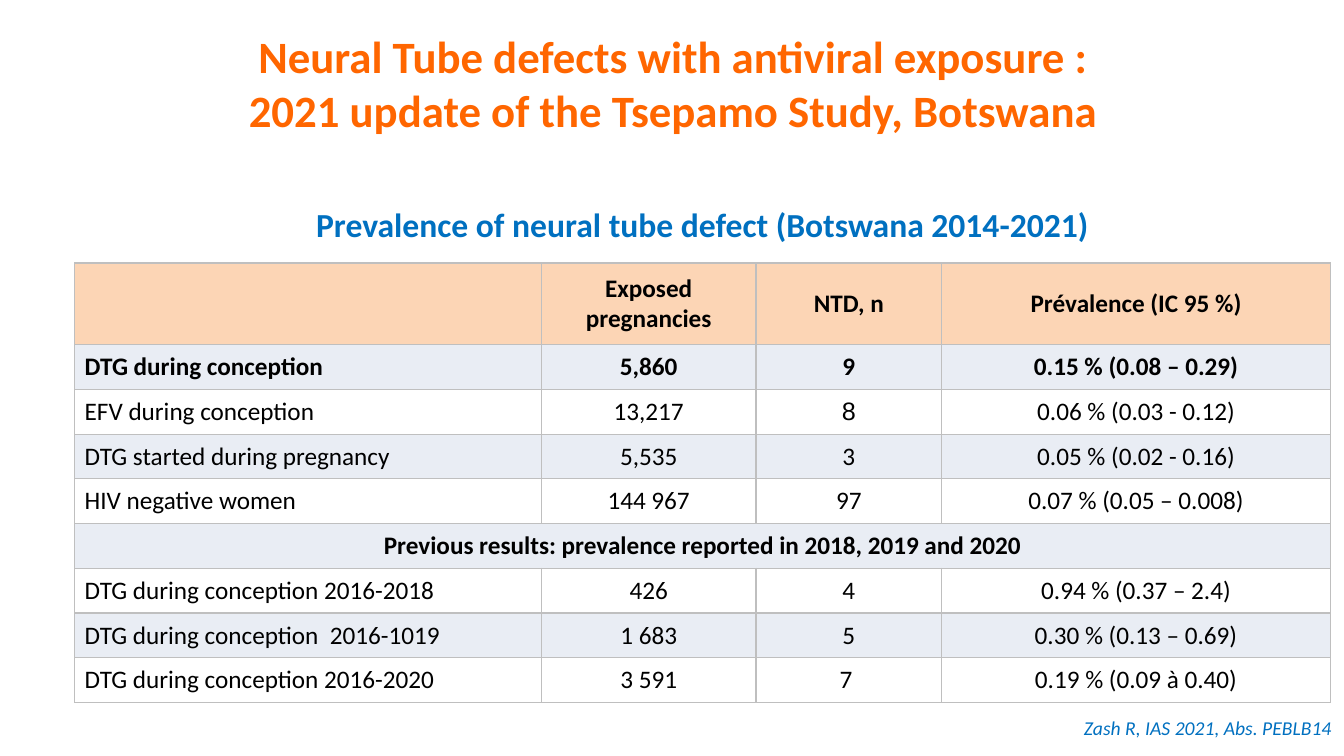
from lxml import etree
from pptx import Presentation
from pptx.dml.color import RGBColor
from pptx.enum.text import MSO_ANCHOR, MSO_AUTO_SIZE, PP_ALIGN
from pptx.oxml.ns import qn
from pptx.util import Pt

LEFT, CENTER, RIGHT = PP_ALIGN.LEFT, PP_ALIGN.CENTER, PP_ALIGN.RIGHT
MIDDLE, TOP = MSO_ANCHOR.MIDDLE, MSO_ANCHOR.TOP
NO_FIT = MSO_AUTO_SIZE.NONE
TITLE_ONLY = 5

COLORS = {
    "title": "FF6600",
    "accent": "0070C0",
    "text": "000000",
    "header": "FCD5B5",
    "band": "E9EDF4",
    "plain": "FFFFFF",
    "border": "BFBFBF",
}

COLUMN_WIDTHS = [333.4, 153.4, 132.5, 277.9]
HEADER_HEIGHT, ROW_HEIGHT = 58.3, 31.95
SECTION = "Previous results: prevalence reported in 2018, 2019 and 2020"
ROWS = [
    ["", "Exposed pregnancies", "NTD, n", "Prévalence (IC 95 %)"],
    ["DTG during conception", "5,860", "9", "0.15 % (0.08 – 0.29)"],
    ["EFV during conception", "13,217", "8", "0.06 % (0.03 - 0.12)"],
    ["DTG started during pregnancy", "5,535", "3", "0.05 % (0.02 - 0.16)"],
    ["HIV negative women", "144 967", "97", "0.07 % (0.05 – 0.008)"],
    [SECTION],
    ["DTG during conception 2016-2018", "426", "4", "0.94 % (0.37 – 2.4)"],
    ["DTG during conception  2016-1019", "1 683", "5", "0.30 % (0.13 – 0.69)"],
    ["DTG during conception 2016-2020", "3 591", "7 ", "0.19 % (0.09 à 0.40)"],
]
BOLD_ROWS = {0, 1, 5}
ARIAL_CELL = (2, 2)


class SlideBuilder:
    def __init__(self, page, font="Calibri"):
        self.page = page
        self.font = font

    def fill_text(self, frame, text, color, align=LEFT, spacing=None, **formats):
        """Fill a text frame with one formatted paragraph."""
        frame.text = text
        para = frame.paragraphs[0]
        para.alignment = align
        para.line_spacing = spacing
        for span in para.runs:
            for name, value in {"name": self.font, **formats}.items():
                setattr(span.font, name, value)
            span.font.color.rgb = RGBColor.from_string(COLORS[color])

    def place(self, box, left, top, width, height):
        for name, value in zip(("left", "top", "width", "height"),
                               (left, top, width, height)):
            setattr(box, name, Pt(value))

    def title(self, text, area, **formats):
        box = self.page.shapes.title
        self.place(box, *area)
        frame = box.text_frame
        frame.auto_size = NO_FIT
        frame.word_wrap = True
        frame.vertical_anchor = MIDDLE
        self.fill_text(frame, text, "title", CENTER, **formats)

    def text(self, text, area, color, align, wrap=True, **formats):
        box = self.page.shapes.add_textbox(*map(Pt, area))
        frame = box.text_frame
        frame.word_wrap = wrap
        frame.vertical_anchor = TOP
        self.fill_text(frame, text, color, align, **formats)

    def borders(self, cell):
        properties = cell._tc.get_or_add_tcPr()
        for side in ("lnL", "lnR", "lnT", "lnB"):
            line = etree.SubElement(properties, qn(f"a:{side}"), w=str(Pt(1)))
            fill = etree.SubElement(line, qn("a:solidFill"))
            etree.SubElement(fill, qn("a:srgbClr"), val=COLORS["border"])

    def table(self, rows, left, top):
        widths = COLUMN_WIDTHS
        heights = [HEADER_HEIGHT] + [ROW_HEIGHT] * (len(rows) - 1)
        grid = self.page.shapes.add_table(
            len(rows), len(widths), Pt(left), Pt(top),
            Pt(sum(widths)), Pt(sum(heights))).table
        for column, width in zip(grid.columns, widths):
            column.width = Pt(width)
        for r, (values, height) in enumerate(zip(rows, heights)):
            grid.rows[r].height = Pt(height)
            fill = "header" if r == 0 else "band" if r % 2 else "plain"
            for c in range(len(widths)):
                cell = grid.cell(r, c)
                self.borders(cell)
                cell.fill.solid()
                cell.fill.fore_color.rgb = RGBColor.from_string(COLORS[fill])
                cell.vertical_anchor = MIDDLE
            # A row with a single value spans the whole table
            if len(values) == 1:
                grid.cell(r, 0).merge(grid.cell(r, len(widths) - 1))
            for c, value in enumerate(values):
                align = LEFT if c == 0 and len(values) > 1 else CENTER
                font = "Arial" if (r, c) == ARIAL_CELL else self.font
                self.fill_text(grid.cell(r, c).text_frame, value, "text", align,
                               name=font, size=Pt(18), bold=r in BOLD_ROWS)


def main():
    deck = Presentation()
    deck.slide_width, deck.slide_height = Pt(960), Pt(540)
    page = deck.slides.add_slide(deck.slide_layouts[TITLE_ONLY])
    builder = SlideBuilder(page)

    # Title
    builder.title("Neural Tube defects with antiviral exposure :\v"
                  "2021 update of the Tsepamo Study, Botswana",
                  (147.6, 0.7, 666.7, 116.6), size=Pt(32), bold=True)

    # Prevalence table and its heading
    builder.table(ROWS, 53.3, 187.9)
    builder.text("Prevalence of neural tube defect (Botswana 2014-2021)",
                 (98.6, 149.8, 806.4, 29.5), "accent", CENTER,
                 spacing=Pt(21), size=Pt(24), bold=True)

    # Reference
    builder.text("Zash R, IAS 2021, Abs. PEBLB14",
                 (765.4, 507.6, 193, 24.5), "accent", RIGHT, wrap=False,
                 size=Pt(14), italic=True)

    deck.save("out.pptx")


if __name__ == "__main__":
    main()
